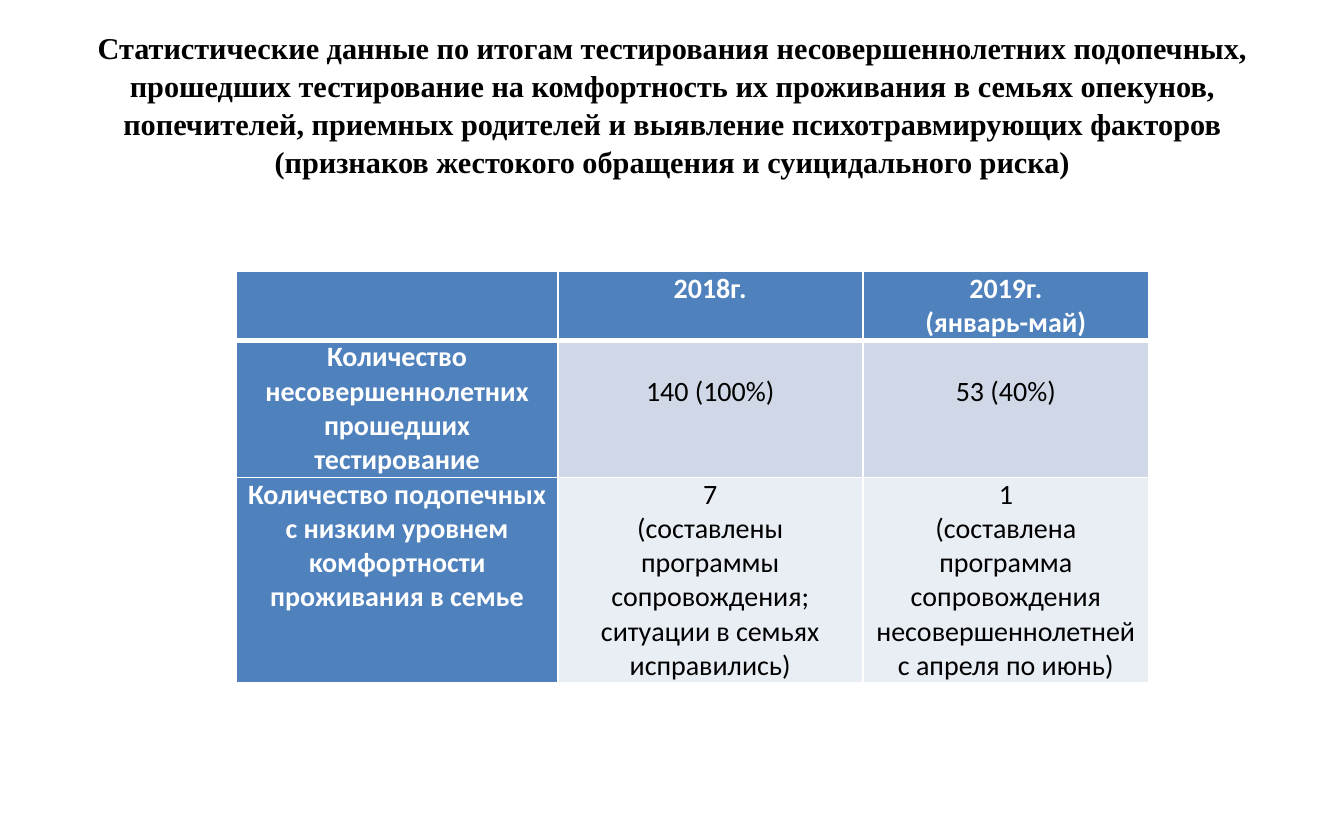
from pptx import Presentation
from pptx.dml.color import RGBColor
from pptx.enum.text import MSO_ANCHOR, MSO_AUTO_SIZE, PP_ALIGN
from pptx.oxml import parse_xml
from pptx.oxml.ns import nsdecls
from pptx.util import Inches, Pt

CENTER = PP_ALIGN.CENTER
MIDDLE, TOP = MSO_ANCHOR.MIDDLE, MSO_ANCHOR.TOP
FIXED = MSO_AUTO_SIZE.NONE

THEME = {
    "head": "4F81BD",
    "bands": ["D0D8E8", "E9EDF4"],
    "rule": "FFFFFF",
    "title": {"name": "Times New Roman", "size": Pt(16.2), "bold": True, "color": "000000"},
    "label": {"name": "Calibri", "size": Pt(15), "bold": True, "color": "FFFFFF"},
    "value": {"name": "Calibri", "size": Pt(15), "bold": False, "color": "000000"},
}

TITLE = (
    "Статистические данные по итогам тестирования несовершеннолетних подопечных, "
    "прошедших тестирование на комфортность их проживания в семьях опекунов, "
    "попечителей, приемных родителей и выявление психотравмирующих факторов "
    "(признаков жестокого обращения и суицидального риска)"
)
ROWS = [
    ["", "2018г.", "2019г.\n(январь-май)"],
    ["Количество несовершеннолетних прошедших тестирование", "140 (100%)", "53 (40%)"],
    [
        "Количество подопечных с низким уровнем комфортности проживания в семье",
        "7\n(составлены программы сопровождения; ситуации в семьях исправились)",
        "1\n(составлена программа сопровождения несовершеннолетней с апреля по июнь)",
    ],
]
WIDTHS = [2.39, 2.27, 2.13]
HEIGHTS = [0.51, 1.02, 1.53]


def write(frame, text, style, gap=1.0):
    """Fill a text frame with centred paragraphs in one theme style."""
    frame.text = text
    for para in frame.paragraphs:
        para.alignment = CENTER
        para.line_spacing = gap
        for key, val in style.items():
            if key == "color":
                para.font.color.rgb = RGBColor.from_string(val)
            else:
                setattr(para.font, key, val)


def add_edge(cell, side, width):
    props = cell._tc.get_or_add_tcPr()
    edge = parse_xml(
        f'<a:ln{side} {nsdecls("a")} w="{Pt(width)}"><a:solidFill>'
        f'<a:srgbClr val="{THEME["rule"]}"/></a:solidFill></a:ln{side}>'
    )
    props.append(edge)


deck = Presentation()
deck.slide_width, deck.slide_height = Inches(10), Inches(6.25)
slide = deck.slides.add_slide(deck.slide_layouts[5])

title = slide.shapes.title
title.left, title.top = Inches(0.5), Inches(0.25)
title.width, title.height = Inches(9), Inches(1.04)
frame = title.text_frame
inset = {"margin_left": 0.08, "margin_top": 0.04, "margin_right": 0.08, "margin_bottom": 0.04}
for key, val in inset.items():
    setattr(frame, key, Inches(val))
frame.word_wrap = True
frame.auto_size = FIXED
frame.vertical_anchor = MIDDLE
write(frame, TITLE, THEME["title"], 1.05)

table = slide.shapes.add_table(
    len(ROWS), len(WIDTHS), Inches(1.76), Inches(2.02), Inches(sum(WIDTHS)), Inches(sum(HEIGHTS))
).table
table.first_col = True
for col, width in zip(table.columns, WIDTHS):
    col.width = Inches(width)
for row, height in zip(table.rows, HEIGHTS):
    row.height = Inches(height)

pad = {"margin_left": 0.07, "margin_top": 0, "margin_right": 0.07, "margin_bottom": 0}
for r, texts in enumerate(ROWS):
    for c, text in enumerate(texts):
        cell = table.cell(r, c)
        label = r == 0 or c == 0
        for key, val in pad.items():
            setattr(cell, key, Inches(val))
        cell.vertical_anchor = TOP
        write(
            cell.text_frame,
            text,
            THEME["label" if label else "value"],
            2.0 if r == 1 and not label else 1.0,
        )
        for side in "LRTB":
            thick = (r == 0 and side == "B") or (r == 1 and side == "T")
            add_edge(cell, side, 3 if thick else 1)
        cell.fill.solid()
        color = THEME["head"] if label else THEME["bands"][r - 1]
        cell.fill.fore_color.rgb = RGBColor.from_string(color)

deck.save("out.pptx")
